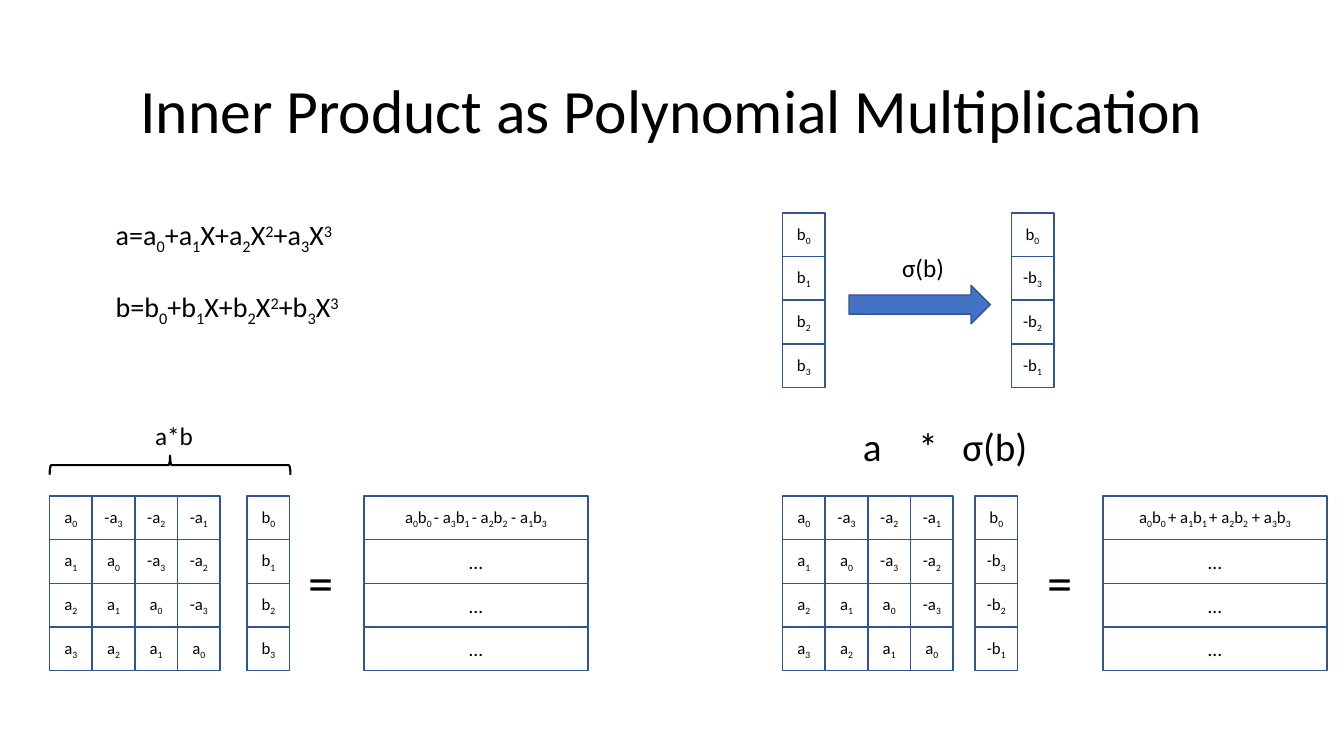
from lxml import etree
from pptx import Presentation
from pptx.dml.color import RGBColor
from pptx.enum.shapes import MSO_SHAPE as SHAPE
from pptx.enum.text import MSO_ANCHOR as ANCHOR, PP_ALIGN as ALIGN
from pptx.oxml.ns import qn
from pptx.util import Inches, Pt

BLACK = RGBColor(0, 0, 0)
WHITE = RGBColor(255, 255, 255)
BLUE = RGBColor(0x44, 0x72, 0xC4)
NAVY = RGBColor(0x32, 0x54, 0x91)
FONT = "Calibri"

SLIDE_W, SLIDE_H = Inches(13.33), Inches(7.5)
# All lengths below are counted in matrix cells.
CELL_W, CELL_H = SLIDE_W / 31.5, SLIDE_H / 17.3
N = 4
VECTOR_ROW, PRODUCT_ROW = 4.87, 11.35

B = [f"b{{{i}}}" for i in range(N)]
SIGMA_B = B[:1] + [f"-b{{{i}}}" for i in range(N - 1, 0, -1)]


def place(col, row, cols, rows):
    return [round(v) for v in (col * CELL_W, row * CELL_H, cols * CELL_W, rows * CELL_H)]


def write(p, markup, size):
    """Write a paragraph; {0} is a subscript and {^2} a superscript."""
    for i, part in enumerate(markup.replace("}", "{").split("{")):
        if not part:
            continue
        r = p.add_run()
        r.text = part.lstrip("^")
        r.font.size, r.font.name = Pt(size), FONT
        r.font.color.rgb = BLACK
        if i % 2:
            baseline = "30000" if part.startswith("^") else "-25000"
            r.font._element.set("baseline", baseline)


def add_label(slide, box, *lines, size, gap=0):
    tf = slide.shapes.add_textbox(*place(*box)).text_frame
    tf.word_wrap = True
    for i, line in enumerate(lines):
        p = tf.add_paragraph() if i else tf.paragraphs[0]
        p.space_before = Pt(gap if i else 0)
        write(p, line, size)
    return tf


def set_tabs(p, *cols):
    tabs = etree.SubElement(p._p.get_or_add_pPr(), qn("a:tabLst"))
    for col in cols:
        etree.SubElement(tabs, qn("a:tab"), pos=str(round(col * CELL_W)), algn="l")


def add_outline(slide, kind, box, fill=None, line=NAVY, width=1):
    sp = slide.shapes.add_shape(kind, *place(*box))
    sp.shadow.inherit = False
    if fill is None:
        sp.fill.background()
    else:
        sp.fill.solid()
        sp.fill.fore_color.rgb = fill
    sp.line.color.rgb = line
    sp.line.width = Pt(width)
    return sp


def add_cell(slide, col, row, markup, cols=1, size=12):
    tf = add_outline(slide, SHAPE.RECTANGLE, (col, row, cols, 1), WHITE).text_frame
    tf.margin_left = tf.margin_right = 0
    tf.word_wrap = True
    tf.vertical_anchor = ANCHOR.MIDDLE
    p = tf.paragraphs[0]
    p.alignment = ALIGN.CENTER
    write(p, markup, size)


def add_vector(slide, col, row, entries):
    for i, entry in enumerate(entries):
        add_cell(slide, col, row + i, entry)


def add_negacyclic_matrix(slide, col, row):
    for j in range(N):
        entries = [f"{'-' if j > i else ''}a{{{(i - j) % N}}}" for i in range(N)]
        add_vector(slide, col + j, row, entries)


def add_product(slide, matrix_col, vector_col, equals_col, result_col, vector, result):
    """Matrix times vector, an equals sign and the result column."""
    add_negacyclic_matrix(slide, matrix_col, PRODUCT_ROW)
    add_vector(slide, vector_col, PRODUCT_ROW, vector)
    add_label(slide, (equals_col, PRODUCT_ROW + 1.15, 1.39, 1.64), "=", size=36)
    add_cell(slide, result_col, PRODUCT_ROW, result, cols=5.25)
    for i in range(1, N):
        add_cell(slide, result_col, PRODUCT_ROW + i, "…", cols=5.25, size=14)


def main():
    prs = Presentation()
    prs.slide_width, prs.slide_height = SLIDE_W, SLIDE_H
    slide = prs.slides.add_slide(prs.slide_layouts[6])

    title = add_label(slide, (2.17, 0.92, 27.17, 3.34),
                      "Inner Product as Polynomial Multiplication", size=44)
    title.vertical_anchor = ANCHOR.MIDDLE
    title.paragraphs[0].alignment = ALIGN.CENTER
    title.paragraphs[0].line_spacing = 0.9

    polynomials = [f"{v}={v}{{0}}+{v}{{1}}X+{v}{{2}}X{{^2}}+{v}{{3}}X{{^3}}" for v in "ab"]
    add_label(slide, (2.48, VECTOR_ROW, 6.62, 3.34), *polynomials, size=20, gap=24)

    add_vector(slide, 18.34, VECTOR_ROW, B)
    add_vector(slide, 23.7, VECTOR_ROW, SIGMA_B)
    add_outline(slide, SHAPE.RIGHT_ARROW, (19.9, 6.53, 3.31, 0.88), BLUE)
    add_label(slide, (20.91, 5.67, 1.7, 0.92), "σ(b)", size=18)

    add_label(slide, (3.4, 9.5, 1.51, 0.92), "a*b", size=18)
    brace = add_outline(slide, SHAPE.LEFT_BRACE, (3.76, 7.89, 0.45, 5.51),
                        line=BLACK, width=1.5)
    brace.rotation = 90
    add_product(slide, 1.16, 5.79, 6.99, 8.53, B,
                "a{0}b{0 }- a{3}b{1 }- a{2}b{2} - a{1}b{3}")

    heading = add_label(slide, (19.99, 9.55, 4.8, 1.31), "a\t*\tσ(b)", size=28)
    set_tabs(heading.paragraphs[0], 1.3, 2.33)
    add_product(slide, 18.34, 22.85, 24.31, 25.85, SIGMA_B,
                "a{0}b{0 }+ a{1}b{1 }+ a{2}b{2} + a{3}b{3}")

    prs.save("out.pptx")


if __name__ == "__main__":
    main()
